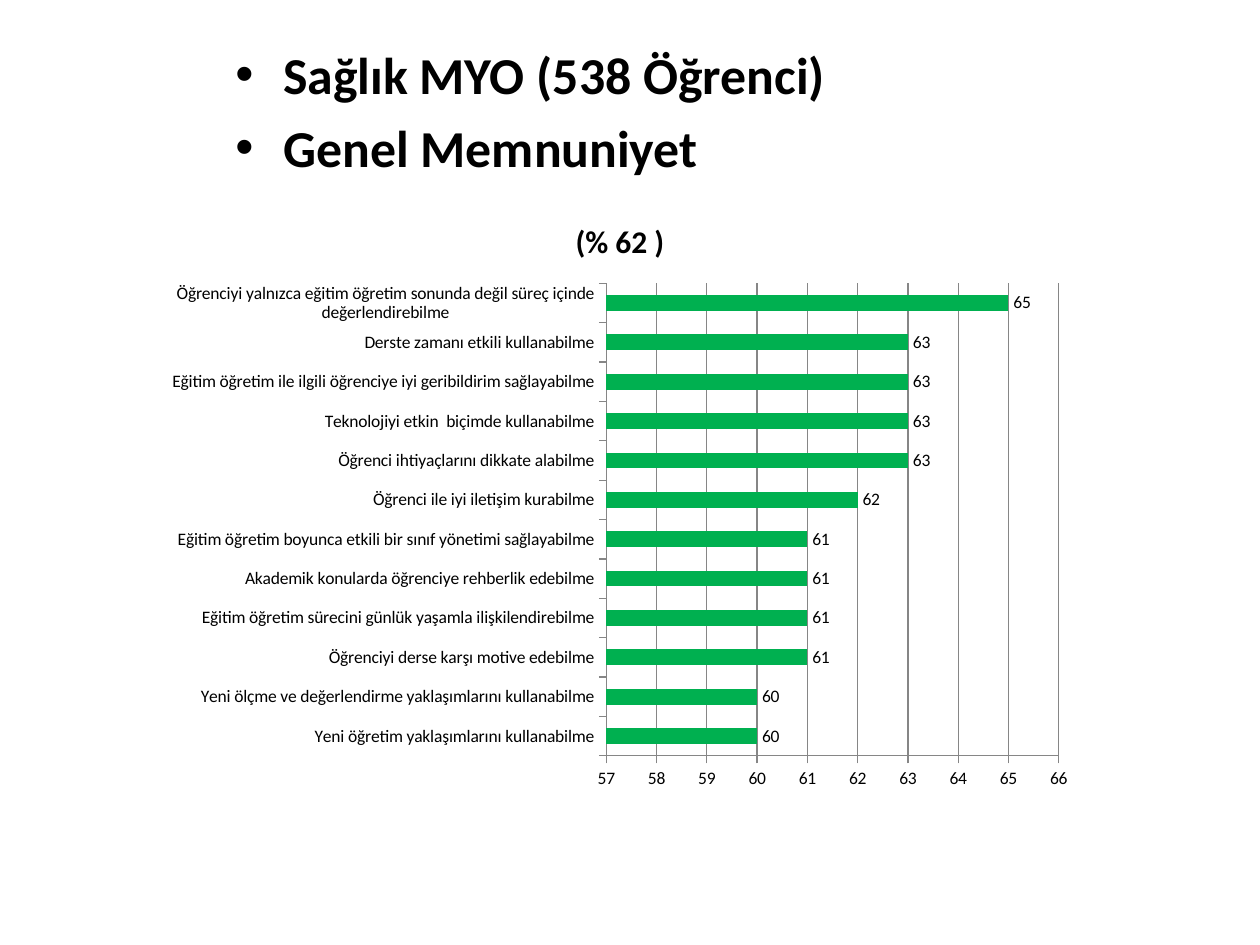
from lxml import etree
from pptx import Presentation
from pptx.chart.data import CategoryChartData
from pptx.dml.color import RGBColor
from pptx.enum.chart import XL_CHART_TYPE, XL_LABEL_POSITION, XL_TICK_MARK
from pptx.oxml.ns import qn
from pptx.util import Inches, Pt

BAR_CLUSTERED = XL_CHART_TYPE.BAR_CLUSTERED
OUTSIDE_END = XL_LABEL_POSITION.OUTSIDE_END
TICK_OUTSIDE = XL_TICK_MARK.OUTSIDE

FONT = "Calibri"
COLORS = {"text": "000000", "bar": "00B050", "axis": "868686"}

HEADINGS = ["Sağlık MYO (538 Öğrenci)", "Genel Memnuniyet"]
CHART_TITLE = "(% 62 )"
SATISFACTION = [
    ("Yeni öğretim yaklaşımlarını kullanabilme", 60),
    ("Yeni ölçme ve değerlendirme yaklaşımlarını kullanabilme", 60),
    ("Öğrenciyi derse karşı motive edebilme", 61),
    ("Eğitim öğretim sürecini günlük yaşamla ilişkilendirebilme", 61),
    ("Akademik konularda öğrenciye rehberlik edebilme", 61),
    ("Eğitim öğretim boyunca etkili bir sınıf yönetimi sağlayabilme", 61),
    ("Öğrenci ile iyi iletişim kurabilme", 62),
    ("Öğrenci ihtiyaçlarını dikkate alabilme", 63),
    ("Teknolojiyi etkin  biçimde kullanabilme", 63),
    ("Eğitim öğretim ile ilgili öğrenciye iyi geribildirim sağlayabilme", 63),
    ("Derste zamanı etkili kullanabilme", 63),
    ("Öğrenciyi yalnızca eğitim öğretim sonunda değil süreç içinde değerlendirebilme", 65),
]


def color(name):
    """Return the named colour."""
    return RGBColor.from_string(COLORS[name])


def style_font(font, size, bold=False):
    """Apply the slide's font at the given size."""
    font.name = FONT
    font.size = Pt(size)
    font.bold = bold
    font.color.rgb = color("text")


def write_text(paragraph, text, size, bold=False, bullet=None, indent=0, space_before=0):
    """Write formatted text into a paragraph, with an optional bullet."""
    run = paragraph.add_run()
    run.text = text
    style_font(run.font, size, bold)
    if bullet:
        paragraph.space_before = Pt(space_before)
        properties = paragraph._p.get_or_add_pPr()
        properties.set("marL", str(Inches(indent)))
        properties.set("indent", str(-Inches(indent)))
        etree.SubElement(properties, qn("a:buFont")).set("typeface", "Arial")
        etree.SubElement(properties, qn("a:buChar")).set("char", bullet)


def add_headings(slide, left, top, width, height):
    """Place the bulleted headings in the given box."""
    frame = slide.shapes.add_textbox(left, top, width, height).text_frame
    frame.word_wrap = True
    for index, heading in enumerate(HEADINGS):
        paragraph = frame.add_paragraph() if index else frame.paragraphs[0]
        write_text(paragraph, heading, 29.6, bold=True, bullet="•", indent=0.38, space_before=5.9)


def style_axis(axis):
    """Give an axis outward ticks and a thin grey line."""
    axis.major_tick_mark = TICK_OUTSIDE
    axis.format.line.color.rgb = color("axis")
    axis.format.line.width = Pt(0.75)
    style_font(axis.tick_labels.font, 10)


def add_satisfaction_chart(slide, left, top, width, height):
    """Place the satisfaction bar chart in the given box."""
    data = CategoryChartData(number_format="0")
    data.categories = [skill for skill, _ in SATISFACTION]
    data.add_series("Series 1", [score for _, score in SATISFACTION])
    chart = slide.shapes.add_chart(BAR_CLUSTERED, left, top, width, height, data).chart
    style_font(chart.font, 10)
    chart.has_legend = False
    chart.has_title = True
    write_text(chart.chart_title.text_frame.paragraphs[0], CHART_TITLE, 18, bold=True)
    chart.chart_title.include_in_layout = False

    style_axis(chart.category_axis)
    scores_axis = chart.value_axis
    style_axis(scores_axis)
    scores_axis.minimum_scale, scores_axis.maximum_scale = 57, 66
    scores_axis.major_unit = 1
    scores_axis.tick_labels.number_format = "0"
    scores_axis.tick_labels.number_format_is_linked = False
    scores_axis.has_major_gridlines = True
    gridline = scores_axis.major_gridlines.format.line
    gridline.color.rgb = color("axis")
    gridline.width = Pt(0.75)

    plot = chart.plots[0]
    plot.gap_width = 150
    plot.vary_by_categories = False
    bars = plot.series[0].format.fill
    bars.solid()
    bars.fore_color.rgb = color("bar")
    plot.has_data_labels = True
    labels = plot.data_labels
    labels.show_value = True
    labels.number_format = "0"
    labels.number_format_is_linked = False
    labels.position = OUTSIDE_END
    style_font(labels.font, 10)


def main():
    """Build and save the slide."""
    deck = Presentation()
    deck.slide_width, deck.slide_height = Inches(10), Inches(7.5)
    slide = deck.slides.add_slide(deck.slide_layouts[6])
    add_headings(slide, Inches(1.77), Inches(0.29), Inches(6.54), Inches(1.18))
    add_satisfaction_chart(slide, Inches(1.22), Inches(1.55), Inches(7.4), Inches(4.8))
    deck.save("out.pptx")


if __name__ == "__main__":
    main()
